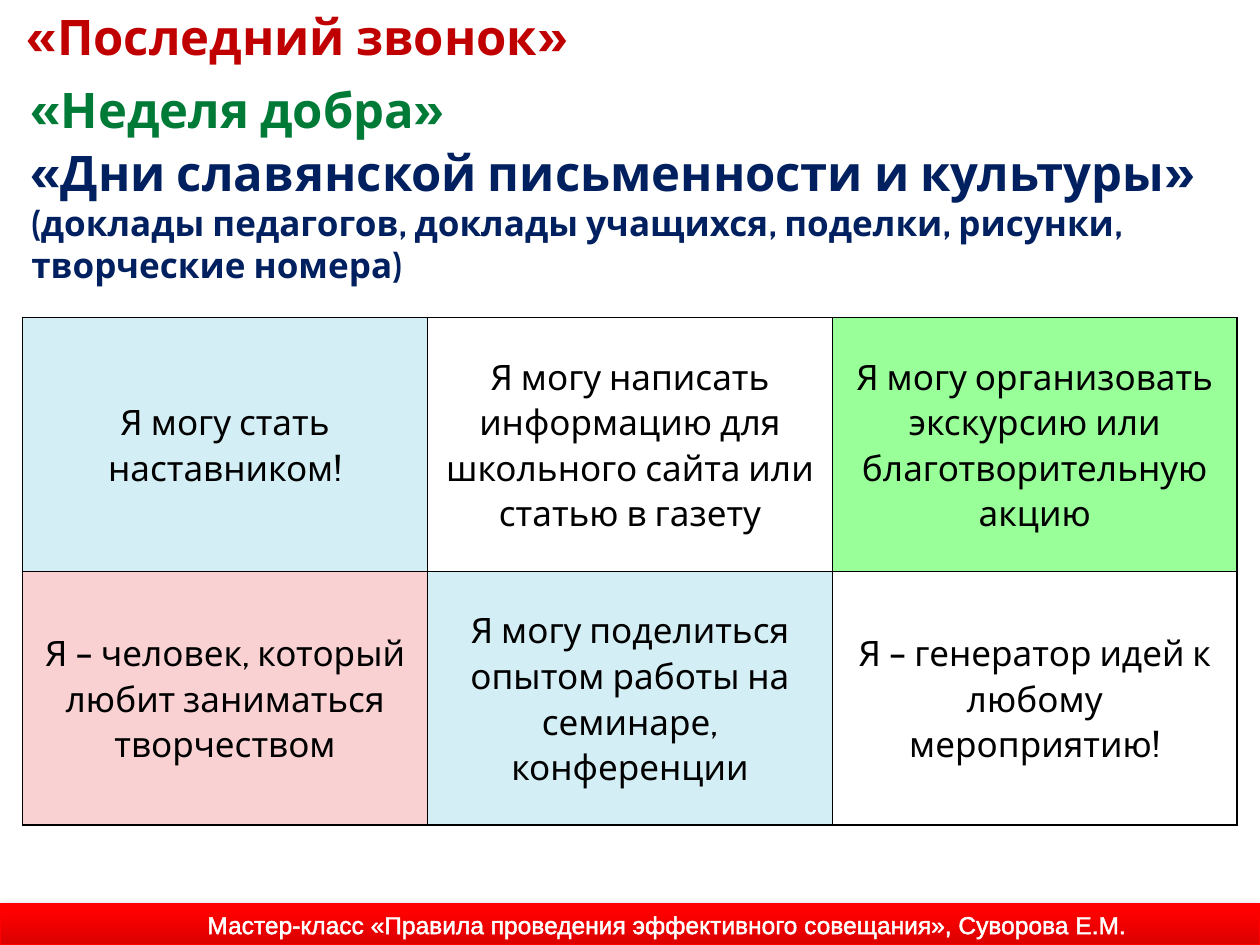
from dataclasses import dataclass
from typing import NamedTuple

from lxml import etree
from pptx import Presentation, util as u
from pptx.dml.color import RGBColor
from pptx.enum import shapes, text
from pptx.oxml import ns


@dataclass(frozen=True)
class Theme:
    font: str = "Cabin"
    footer_font: str = "Arial"
    title: float = 28
    body: float = 20
    footer: float = 14
    red: str = "C00000"
    green: str = "007A37"
    navy: str = "002060"
    black: str = "000000"
    white: str = "FFFFFF"
    bar: str = "FF0000"
    bar_dark: str = "DA0000"
    sky: str = "D3EEF5"
    lime: str = "99FF99"
    pink: str = "F9D1D3"


class Area(NamedTuple):
    """Left, top, width and height in percent of the slide's size."""
    left: float
    top: float
    width: float
    height: float


class Span(NamedTuple):
    words: str
    size: float
    color: str
    bold: bool = False
    font: str = "Cabin"


class Heading(NamedTuple):
    area: Area
    spans: list[Span]


class Card(NamedTuple):
    words: str
    fill: str


THEME = Theme()
WIDTH, HEIGHT = u.Inches(10), u.Inches(7.5)

HEADINGS = [
    Heading(Area(1.2, 0, 86.6, 7.6),
            [Span("«Последний звонок»", THEME.title, THEME.red, True)]),
    Heading(Area(1.5, 7.73, 86.6, 7.6),
            [Span("«Неделя добра»", THEME.title, THEME.green, True)]),
    Heading(Area(1.5, 14.4, 96.6, 16.67), [
        Span("«Дни славянской письменности и культуры» ",
             THEME.title, THEME.navy, True),
        Span("(доклады педагогов, доклады учащихся, поделки, рисунки, "
             "творческие номера)", THEME.body, THEME.navy, True)]),
]
CARDS = [
    [Card("Я могу стать наставником!", THEME.sky),
     Card("Я могу написать информацию для школьного сайта или статью в газету",
          THEME.white),
     Card("Я могу организовать экскурсию или благотворительную акцию",
          THEME.lime)],
    [Card("Я – человек, который любит заниматься творчеством", THEME.pink),
     Card("Я могу поделиться опытом работы на семинаре, конференции",
          THEME.sky),
     Card("Я – генератор идей к любому мероприятию!", THEME.white)],
]
CARDS_AREA = Area(1.8, 33.6, 96.4, 53.73)
BAR_AREA = Area(0, 95.6, 100, 4.4)
FOOTER_AREA = Area(15.2, 95.6, 75.5, 4.53)
FOOTER = Span("Мастер-класс «Правила проведения эффективного совещания», "
              "Суворова Е.М.", THEME.footer, THEME.white,
              font=THEME.footer_font)


def place(area: Area) -> tuple[int, int, int, int]:
    return (int(WIDTH * area.left / 100), int(HEIGHT * area.top / 100),
            int(WIDTH * area.width / 100), int(HEIGHT * area.height / 100))


def rgb(color: str) -> RGBColor:
    return RGBColor.from_string(color)


def add_span(para, span: Span):
    run = para.add_run()
    run.text = span.words
    font = run.font
    font.name, font.size, font.bold = span.font, u.Pt(span.size), span.bold
    font.color.rgb = rgb(span.color)
    return run


def add_color(parent, color: str):
    return etree.SubElement(parent, ns.qn("a:srgbClr"), val=color)


def line_element(tag: str, color: str, points: float):
    line = etree.Element(ns.qn(tag), w=str(u.Pt(points)))
    add_color(etree.SubElement(line, ns.qn("a:solidFill")), color)
    return line


def add_text(page, area: Area, spans: list[Span], wrap: bool = True):
    box = page.shapes.add_textbox(*place(area))
    box.text_frame.word_wrap = wrap
    box.text_frame.auto_size = text.MSO_AUTO_SIZE.SHAPE_TO_FIT_TEXT
    para = box.text_frame.paragraphs[0]
    for span in spans:
        add_span(para, span)
    return para


def add_bar(page) -> None:
    bar = page.shapes.add_shape(shapes.MSO_SHAPE.RECTANGLE, *place(BAR_AREA))
    bar.line.color.rgb = rgb(THEME.bar)
    bar.line.width = u.Pt(0.75)
    bar.fill.gradient()
    bar.fill.gradient_angle = 90
    stops = zip(bar.fill.gradient_stops, (0, 0.8), (THEME.bar_dark, THEME.bar))
    for stop, position, color in stops:
        stop.position = position
        stop.color.rgb = rgb(color)
    bar.shadow.inherit = False
    effects = bar._element.spPr.find(ns.qn("a:effectLst"))
    shadow = etree.SubElement(
        effects, ns.qn("a:outerShdw"), blurRad=str(u.Pt(5)),
        dist=str(u.Pt(1.8)), dir="5400000", rotWithShape="0")
    etree.SubElement(add_color(shadow, THEME.black), ns.qn("a:alpha"),
                     val="35000")


def add_footer(page) -> None:
    add_bar(page)
    para = add_text(page, FOOTER_AREA, [], wrap=False)
    para.alignment = text.PP_ALIGN.CENTER
    run = add_span(para, FOOTER)
    run.font._element.insert(0, line_element("a:ln", THEME.white, 0.8))


def fill_card(cell, card: Card) -> None:
    cell.vertical_anchor = text.MSO_ANCHOR.MIDDLE
    cell.fill.solid()
    cell.fill.fore_color.rgb = rgb(card.fill)
    for index, side in enumerate("LRTB"):
        border = line_element(f"a:ln{side}", THEME.black, 1)
        cell._tc.tcPr.insert(index, border)
    para = cell.text_frame.paragraphs[0]
    para.alignment = text.PP_ALIGN.CENTER
    para.line_spacing = 1.07
    para.space_after = u.Pt(8)
    add_span(para, Span(card.words, THEME.body, THEME.black))


def add_cards(page) -> None:
    frame = page.shapes.add_table(len(CARDS), len(CARDS[0]),
                                  *place(CARDS_AREA))
    table = frame.table
    table.first_row = table.horz_banding = False
    for row, cards in enumerate(CARDS):
        for column, card in enumerate(cards):
            fill_card(table.cell(row, column), card)


def main() -> None:
    deck = Presentation()
    deck.slide_width, deck.slide_height = WIDTH, HEIGHT
    page = deck.slides.add_slide(deck.slide_layouts[6])
    add_footer(page)
    for heading in HEADINGS:
        add_text(page, heading.area, heading.spans)
    add_cards(page)
    deck.save("out.pptx")


if __name__ == "__main__":
    main()
